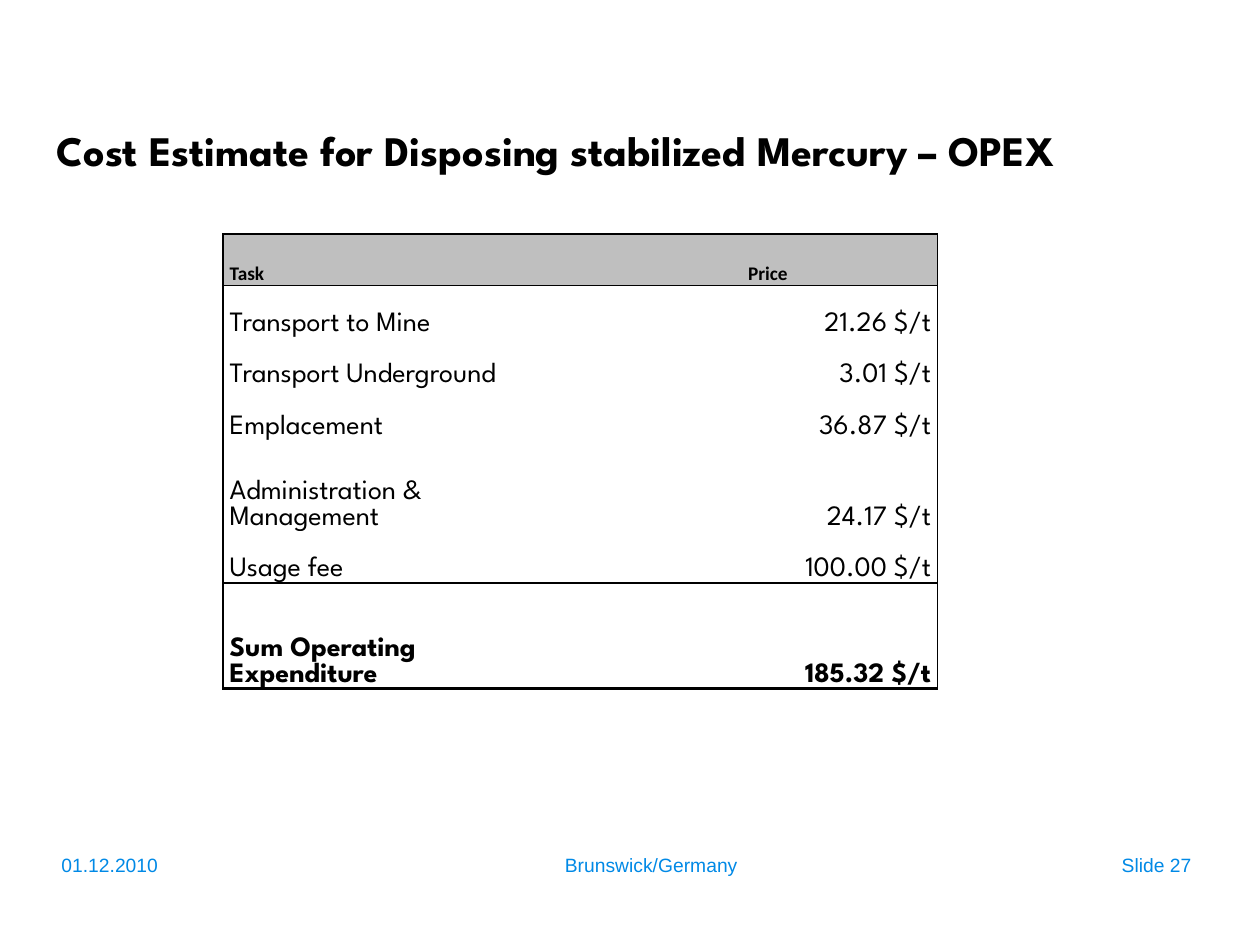
from lxml import etree
from pptx import Presentation
from pptx.dml.color import RGBColor
from pptx.enum import shapes, text
from pptx.oxml import ns
from pptx.util import Cm, Pt

COLOURS = {"ink": "000000", "paper": "FFFFFF", "header": "BFBFBF", "footer": "0089E6"}
ALIGN = text.PP_ALIGN
HEADING = {"name": "League Spartan", "size": Pt(24), "bold": True}
BODY = {"name": "League Spartan", "size": Pt(16), "bold": False}
TOTAL = {**BODY, "bold": True}
LABEL = {"name": "Calibri", "size": Pt(11), "bold": True}
FOOTER = {"name": "Arial", "size": Pt(11), "bold": False}

COLUMNS = [4.8, 1.68, 0.5, 0.58, 6.84]
COSTS = [
    ("Task", "Price", 1.04, 1),
    ("Transport to Mine", "21.26 $/t", 1.04, 2),
    ("Transport Underground", "3.01 $/t", 1.04, 3),
    ("Emplacement", "36.87 $/t", 1.04, 2),
    ("Administration & Management", "24.17 $/t", 1.83, 1),
    ("Usage fee", "100.00 $/t", 1.04, 1),
    ("Sum Operating Expenditure", "185.32 $/t", 2.13, 1),
]


def apply(target, values):
    for name, value in values.items():
        setattr(target, name, value)


class SlideBuilder:
    def __init__(self, deck):
        self.page = deck.slides.add_slide(deck.slide_layouts[6])

    def colour(self, name):
        return RGBColor.from_string(COLOURS[name])

    def paint(self, target, name):
        target.fill.solid()
        target.fill.fore_color.rgb = self.colour(name)

    def add_words(self, para, words, font, colour="ink", align=ALIGN.LEFT):
        para.alignment = align
        span = para.add_run()
        span.text = words
        apply(span.font, font)
        span.font.color.rgb = self.colour(colour)

    def text_box(self, place, words, font, colour="ink", spacing=None, tabs=()):
        box = self.page.shapes.add_shape(
            shapes.MSO_SHAPE.RECTANGLE, *[Cm(length) for length in place])
        box.shadow.inherit = False
        box.line.fill.background()
        self.paint(box, "paper")
        apply(box.text_frame, {"word_wrap": True, "vertical_anchor": text.MSO_ANCHOR.TOP})
        para = box.text_frame.paragraphs[0]
        para.line_spacing = spacing
        if tabs:
            stops = etree.SubElement(para._p.get_or_add_pPr(), ns.qn("a:tabLst"))
            for position, kind in tabs:
                etree.SubElement(stops, ns.qn("a:tab"), pos=str(Cm(position)), algn=kind)
        self.add_words(para, words, font, colour)

    def borders(self, cell, widths):
        properties = cell._tc.get_or_add_tcPr()
        for side in "LRTB":
            width = widths.get(side, 0)
            line = etree.SubElement(properties, ns.qn(f"a:ln{side}"), w=str(Pt(width)))
            if width:
                fill = etree.SubElement(line, ns.qn("a:solidFill"))
                etree.SubElement(fill, ns.qn("a:srgbClr"), val=COLOURS["ink"])
            else:
                etree.SubElement(line, ns.qn("a:noFill"))

    def cost_table(self, left, top, columns, costs):
        heights = [cost[2] for cost in costs]
        last_row, last_column = len(costs) - 1, len(columns) - 1
        table = self.page.shapes.add_table(
            len(costs), len(columns), Cm(left), Cm(top),
            Cm(sum(columns)), Cm(sum(heights))).table
        apply(table, {"first_row": False, "horz_banding": False})
        for column, width in zip(table.columns, columns):
            column.width = Cm(width)
        for index, (task, price, height, joined) in enumerate(costs):
            table.rows[index].height = Cm(height)
            header, total = index == 0, index == last_row
            font = LABEL if header else TOTAL if total else BODY
            sides = {}
            if index in (0, 1, last_row):
                sides["T"] = 1
            if index in (0, last_row - 1, last_row):
                sides["B"] = 2.25 if total else 1
            for number in range(len(columns)):
                cell = table.cell(index, number)
                apply(cell, {"margin_left": Cm(0.13), "margin_right": Cm(0.13),
                             "margin_top": 0, "margin_bottom": 0,
                             "vertical_anchor": text.MSO_ANCHOR.BOTTOM})
                edge = {0: {"L": 1}, last_column: {"R": 1}}.get(number, {})
                self.borders(cell, {**sides, **edge})
                self.paint(cell, "header" if header else "paper")
            if joined > 1:
                table.cell(index, 0).merge(table.cell(index, joined - 1))
            price_align = ALIGN.CENTER if header else ALIGN.RIGHT
            for number, words, align in ((0, task, ALIGN.LEFT),
                                         (last_column, price, price_align)):
                para = table.cell(index, number).text_frame.paragraphs[0]
                self.add_words(para, words, font, align=align)


def main():
    deck = Presentation()
    apply(deck, {"slide_width": Cm(25.4), "slide_height": Cm(19.05)})
    builder = SlideBuilder(deck)
    builder.text_box((0.89, 2.13, 23.93, 2.21),
                     "Cost Estimate for Disposing stabilized Mercury – OPEX",
                     HEADING, spacing=Pt(36))
    builder.text_box((0.99, 17.07, 24, 0.99),
                     "01.12.2010\tBrunswick/Germany\tSlide 27",
                     FOOTER, "footer", tabs=((11.89, "ctr"), (22.78, "r")))
    builder.cost_table(4.5, 4.72, COLUMNS, COSTS)
    deck.save("out.pptx")


if __name__ == "__main__":
    main()
